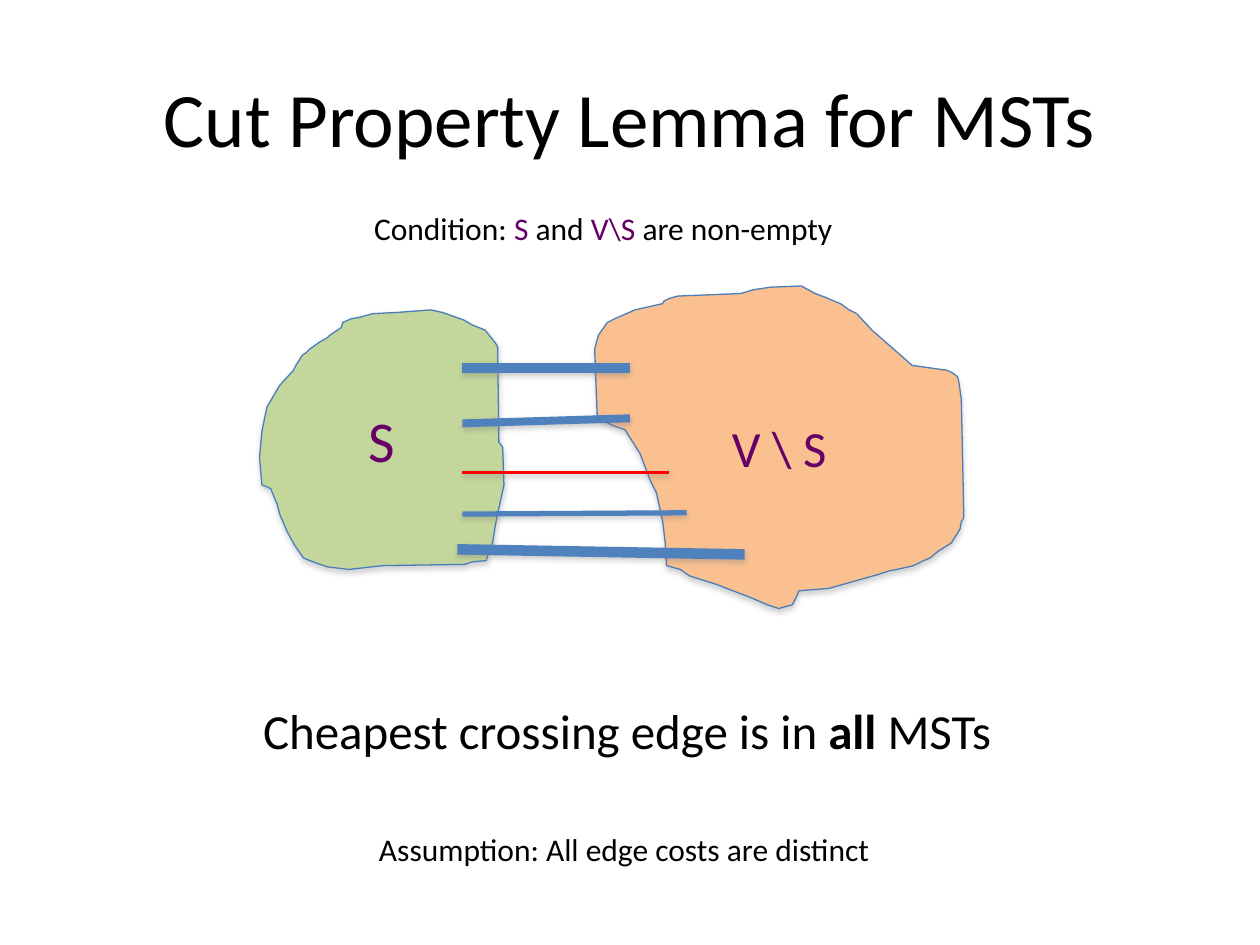
from dataclasses import dataclass

from lxml.etree import SubElement
from pptx import Presentation
from pptx.dml.color import RGBColor
from pptx.enum.shapes import MSO_CONNECTOR
from pptx.enum.text import MSO_ANCHOR, MSO_AUTO_SIZE, PP_ALIGN
from pptx.oxml.ns import qn
from pptx.util import Inches, Pt


@dataclass(frozen=True)
class Theme:
    font: str = "Calibri"
    ink: str = "000000"
    accent: str = "660066"
    green: str = "C3D69B"
    orange: str = "FAC090"
    rim: str = "4A7EBB"
    edge: str = "4F81BD"
    cheap: str = "FF0000"
    shade: str = "808080"
    title: int = 44
    claim: int = 28
    note: int = 18


LEFT = [
    (233, 294), (222, 306), (212, 323), (208, 342), (206, 363), (208, 385),
    (211, 386), (215, 388), (217, 393), (220, 400), (222, 408), (228, 422),
    (234, 433), (241, 443), (246, 445), (254, 448), (260, 450), (277, 452),
    (304, 449), (369, 448), (375, 446), (386, 445), (389, 434), (391, 431),
    (393, 418), (395, 408), (400, 385), (399, 355), (396, 351), (395, 275),
    (393, 272), (385, 262), (375, 258), (368, 254), (351, 248), (342, 246),
    (316, 248), (296, 249), (285, 252), (279, 253), (272, 256), (271, 260),
    (262, 266), (260, 268), (253, 272), (249, 275), (246, 277), (243, 280),
    (240, 282), (235, 290),
]
RIGHT = [
    (526, 241), (504, 246), (488, 253), (482, 256), (475, 266), (472, 277),
    (473, 303), (474, 329), (476, 332), (481, 335), (487, 338), (496, 341),
    (508, 360), (516, 381), (521, 391), (526, 414), (528, 431), (529, 449),
    (540, 452), (547, 457), (569, 464), (582, 469), (595, 474), (602, 477),
    (609, 480), (618, 483), (629, 480), (633, 472), (634, 469), (658, 467),
    (697, 456), (706, 453), (712, 452), (725, 449), (733, 445), (738, 443),
    (744, 438), (755, 431), (762, 420), (763, 414), (765, 411), (763, 317),
    (761, 303), (760, 299), (756, 296), (752, 294), (724, 290), (700, 269),
    (692, 262), (680, 249), (674, 246), (667, 241), (662, 239), (655, 236),
    (647, 233), (636, 227), (611, 228), (605, 229), (598, 230), (588, 233),
    (538, 235), (531, 237), (527, 239),
]


def write(para, text, font=None, size=None, color=None, bold=False):
    run = para.add_run()
    run.text = text
    run.font.name = font
    run.font.size = Pt(size)
    run.font.bold = bold
    run.font.color.rgb = RGBColor.from_string(color)


class Board:
    def __init__(self, slide, theme):
        self.slide = slide
        self.theme = theme

    def fill_text(self, frame, parts, size):
        for text, color, bold in parts:
            write(frame.paragraphs[0], text, font=self.theme.font,
                  size=size, color=color, bold=bold)

    def title(self, text):
        shape = self.slide.shapes.title
        shape.left, shape.top = Inches(0.5), Inches(0.3)
        shape.width, shape.height = Inches(9), Inches(1.25)
        self.fill_text(shape.text_frame, [(text, self.theme.ink, False)],
                       self.theme.title)

    def label(self, place, parts, size):
        box = self.slide.shapes.add_textbox(*map(Inches, place))
        frame = box.text_frame
        frame.word_wrap = False
        frame.auto_size = MSO_AUTO_SIZE.SHAPE_TO_FIT_TEXT
        self.fill_text(frame, parts, size)

    def region(self, points, text, size, color):
        pen = self.slide.shapes.build_freeform(*points[0], scale=Inches(0.01))
        pen.add_line_segments(points[1:], close=True)
        shape = pen.convert_to_shape()
        shape.fill.solid()
        shape.fill.fore_color.rgb = RGBColor.from_string(color)
        self.stroke(shape, self.theme.rim, 0.75)
        self.shadow(shape, 35, 1.8)
        frame = shape.text_frame
        frame.vertical_anchor = MSO_ANCHOR.MIDDLE
        frame.paragraphs[0].alignment = PP_ALIGN.CENTER
        self.fill_text(frame, [(text, self.theme.accent, False)], size)

    def edge(self, start, end, width, color):
        line = self.slide.shapes.add_connector(
            MSO_CONNECTOR.STRAIGHT, *map(Inches, start + end))
        self.stroke(line, color, width)
        self.shadow(line, 38, 1.6)

    def stroke(self, shape, color, width):
        shape.line.color.rgb = RGBColor.from_string(color)
        shape.line.width = Pt(width)

    def shadow(self, shape, alpha, gap):
        effects = SubElement(shape.element.spPr, qn("a:effectLst"))
        outer = SubElement(effects, qn("a:outerShdw"), blurRad=str(Pt(3.1)),
                           dist=str(Pt(gap)), dir="5400000", rotWithShape="0")
        color = SubElement(outer, qn("a:srgbClr"), val=self.theme.shade)
        SubElement(color, qn("a:alpha"), val=str(alpha * 1000))


def main():
    deck = Presentation()
    deck.slide_width, deck.slide_height = Inches(10), Inches(7.5)
    theme = Theme()
    board = Board(deck.slides.add_slide(deck.slide_layouts[5]), theme)
    ink, accent = theme.ink, theme.accent

    board.title("Cut Property Lemma for MSTs")
    board.region(LEFT, "S", 33, theme.green)
    board.region(RIGHT, r"V \ S", 29, theme.orange)

    for start, end, width, color in [
        ((3.67, 2.92), (5, 2.92), 6, theme.edge),
        ((3.67, 3.36), (5, 3.32), 4.5, theme.edge),
        ((3.67, 4.08), (5.45, 4.07), 3, theme.edge),
        ((3.67, 3.75), (5.31, 3.75), 2, theme.cheap),
        ((3.63, 4.36), (5.91, 4.4), 6, theme.edge),
    ]:
        board.edge(start, end, width, color)

    board.label((1.99, 5.51, 6.04, 0.57), [
        ("Cheapest crossing edge is in ", ink, False),
        ("all", ink, True),
        (" MSTs", ink, False),
    ], theme.claim)
    board.label((2.87, 1.61, 3.88, 0.4), [
        ("Condition: ", ink, False),
        ("S", accent, False),
        (" and ", ink, False),
        (r"V\S", accent, False),
        (" are non-empty", ink, False),
    ], theme.note)
    board.label((2.91, 6.54, 4.14, 0.4), [
        ("Assumption: All edge costs are distinct", ink, False),
    ], theme.note)
    deck.save("out.pptx")


if __name__ == "__main__":
    main()
